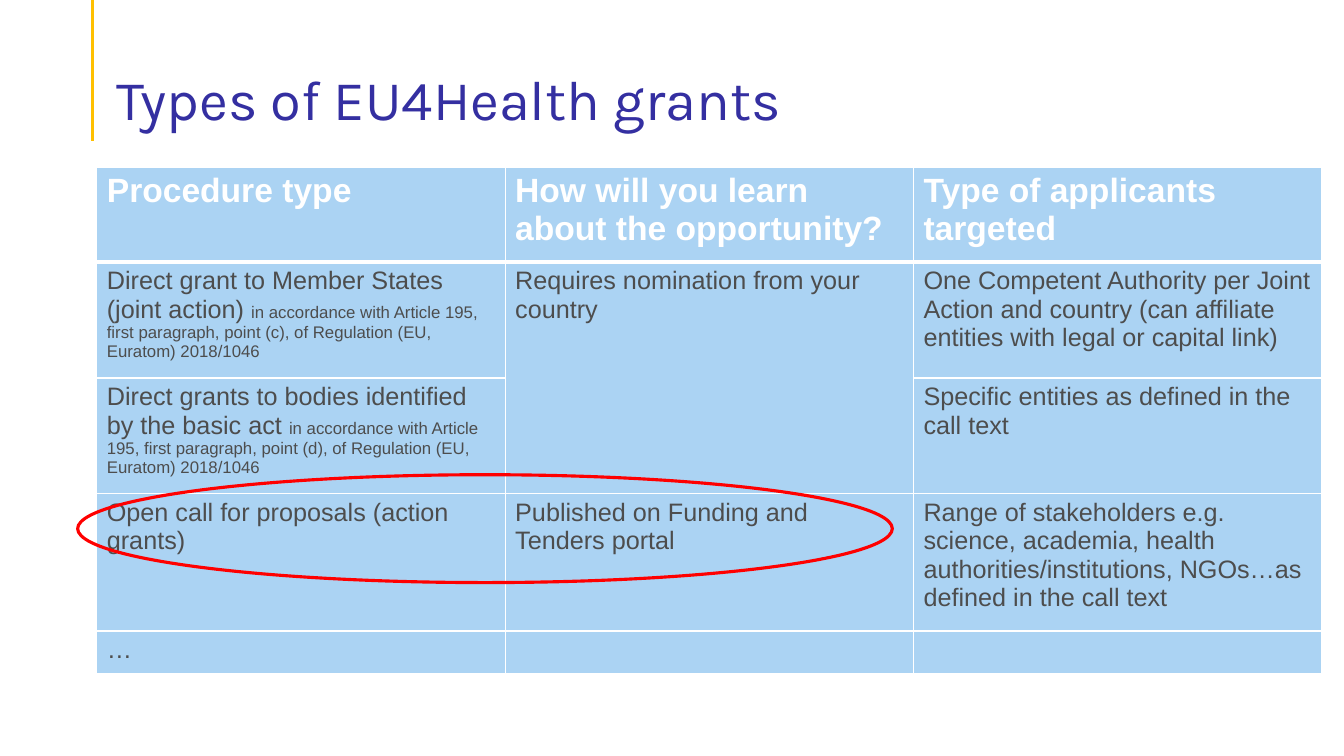
import pptx
import pptx.dml.color
import pptx.enum.shapes
import pptx.enum.text
import pptx.oxml
import pptx.oxml.ns
import pptx.util
from dataclasses import dataclass

Inches = pptx.util.Inches
Pt = pptx.util.Pt


@dataclass(frozen=True)
class Theme:
    title_color: str = "342FA1"
    accent: str = "FFC000"
    cell_fill: str = "ABD3F3"
    white: str = "FFFFFF"
    body_color: str = "4D4D4D"
    highlight: str = "FF0000"
    title_font: str = "Karla"
    body_font: str = "Arial"
    title_size: int = 40
    header_size: int = 24
    body_size: int = 18
    note_size: int = 12
    line_width: float = 2.25
    border: int = 1
    header_border: int = 3


THEME = Theme()

COLUMN_WIDTH = 4.05
ROW_HEIGHTS = [0.94, 1.15, 1.15, 1.36, 0.42]
LEGAL_BASIS = ("in accordance with Article 195, first paragraph, point ({}), "
               "of Regulation (EU, Euratom) 2018/1046")
# Each cell holds its main text and, where there is one, a smaller legal note.
GRANTS = [
    [("Procedure type",), ("How will you learn about the opportunity?",),
     ("Type of applicants targeted",)],
    [("Direct grant to Member States (joint action) ", LEGAL_BASIS.format("c")),
     ("Requires nomination from your country",),
     ("One Competent Authority per Joint Action and country "
      "(can affiliate entities with legal or capital link)",)],
    [("Direct grants to bodies identified by the basic act ", LEGAL_BASIS.format("d")),
     (), ("Specific entities as defined in the call text",)],
    [("Open call for proposals (action grants)",),
     ("Published on Funding and Tenders portal",),
     ("Range of stakeholders e.g. science, academia, health authorities/institutions, "
      "NGOs…as defined in the call text",)],
    [("…",), (), ()],
]


def rgb(color):
    return pptx.dml.color.RGBColor.from_string(color)


def set_attributes(target, values):
    for name, value in values.items():
        setattr(target, name, value)


def add_run(paragraph, text, color, **font_values):
    run = paragraph.add_run()
    run.text = text
    set_attributes(run.font, font_values)
    run.font.color.rgb = rgb(color)


def style_line(line, color):
    line.color.rgb = rgb(color)
    line.width = Pt(THEME.line_width)


def add_accent_line(slide, left, top, height):
    x = Inches(left)
    connector = slide.shapes.add_connector(
        pptx.enum.shapes.MSO_CONNECTOR.STRAIGHT, x, Inches(top), x, Inches(top + height))
    style_line(connector.line, THEME.accent)
    connector._element.spPr.append(pptx.oxml.parse_xml(
        f"<a:effectLst {pptx.oxml.ns.nsdecls('a')}/>"))


def fill_title(slide, text, left, top, width, height):
    title = slide.shapes.title
    set_attributes(title, {"left": Inches(left), "top": Inches(top),
                           "width": Inches(width), "height": Inches(height)})
    set_attributes(title.text_frame, {
        "word_wrap": True,
        "auto_size": pptx.enum.text.MSO_AUTO_SIZE.NONE,
        "vertical_anchor": pptx.enum.text.MSO_ANCHOR.BOTTOM,
        "margin_bottom": 0,
    })
    paragraph = title.text_frame.paragraphs[0]
    set_attributes(paragraph, {"alignment": pptx.enum.text.PP_ALIGN.LEFT,
                               "line_spacing": 0.9})
    add_run(paragraph, text, THEME.title_color,
            name=THEME.title_font, size=Pt(THEME.title_size))


def add_borders(cell, widths):
    """Draw white cell borders; widths maps L, R, T, B to points, in that order."""
    properties = cell._tc.get_or_add_tcPr()
    for side, width in widths.items():
        properties.append(pptx.oxml.parse_xml(
            f'<a:ln{side} {pptx.oxml.ns.nsdecls("a")} w="{Pt(width)}">'
            f'<a:solidFill><a:srgbClr val="{THEME.white}"/></a:solidFill></a:ln{side}>'))


def fill_cell(cell, texts, row_index):
    is_header = row_index == 0
    thin, thick = THEME.border, THEME.header_border
    add_borders(cell, {"L": thin, "R": thin,
                       "T": thick if row_index == 1 else thin,
                       "B": thick if is_header else thin})
    cell.fill.solid()
    cell.fill.fore_color.rgb = rgb(THEME.cell_fill)
    color = THEME.white if is_header else THEME.body_color
    main_size = THEME.header_size if is_header else THEME.body_size
    for text, size in zip(texts, (main_size, THEME.note_size)):
        add_run(cell.text_frame.paragraphs[0], text, color,
                name=THEME.body_font, size=Pt(size), bold=is_header)


def add_grants_table(slide, left, top):
    column_count = len(GRANTS[0])
    table = slide.shapes.add_table(
        len(GRANTS), column_count, Inches(left), Inches(top),
        Inches(COLUMN_WIDTH * column_count), Inches(sum(ROW_HEIGHTS))).table
    table.horz_banding = False
    for column in table.columns:
        column.width = Inches(COLUMN_WIDTH)
    for row, height in zip(table.rows, ROW_HEIGHTS):
        row.height = Inches(height)
    for row_index, row_texts in enumerate(GRANTS):
        for column_index, texts in enumerate(row_texts):
            fill_cell(table.cell(row_index, column_index), texts, row_index)
    table.cell(1, 1).merge(table.cell(2, 1))


def add_highlight(slide, left, top, width, height):
    ellipse = slide.shapes.add_shape(
        pptx.enum.shapes.MSO_SHAPE.OVAL,
        Inches(left), Inches(top), Inches(width), Inches(height))
    ellipse.shadow.inherit = False
    ellipse.fill.background()
    style_line(ellipse.line, THEME.highlight)


def build_grants_slide(presentation):
    slide = presentation.slides.add_slide(presentation.slide_layouts[5])
    add_accent_line(slide, 0.92, 0, 1.4)
    fill_title(slide, "Types of EU4Health grants", 1.06, 0.46, 11.5, 0.86)
    add_grants_table(slide, 0.96, 1.66)
    add_highlight(slide, 0.77, 4.71, 8.08, 1.07)


def main():
    presentation = pptx.Presentation()
    set_attributes(presentation, {"slide_width": Inches(13.33),
                                  "slide_height": Inches(7.5)})
    build_grants_slide(presentation)
    presentation.save("out.pptx")


if __name__ == "__main__":
    main()
